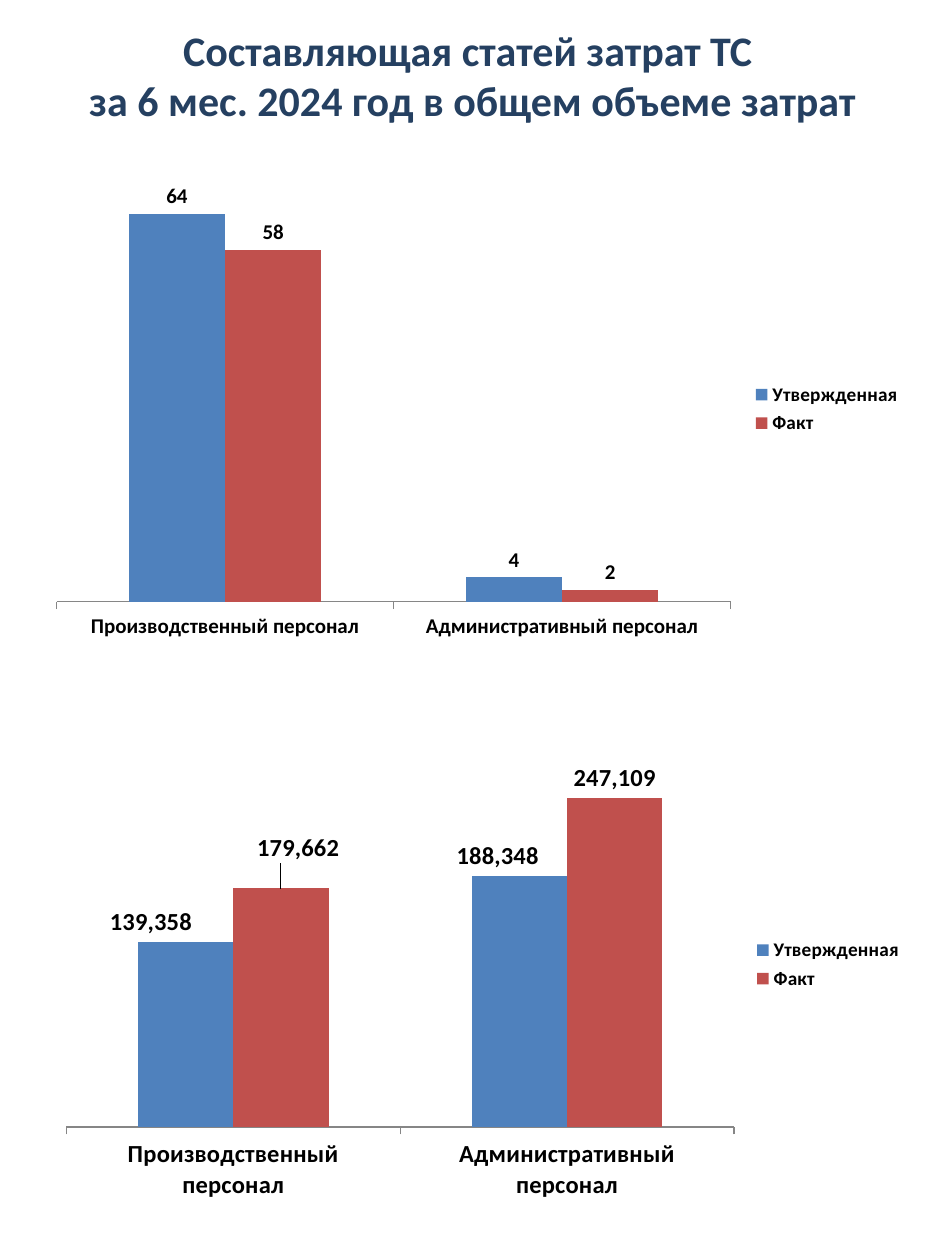
from lxml import etree
from pptx import Presentation
from pptx.chart.data import CategoryChartData
from pptx.dml.color import RGBColor
from pptx.enum.chart import (XL_CHART_TYPE, XL_LABEL_POSITION, XL_LEGEND_POSITION,
                             XL_TICK_LABEL_POSITION, XL_TICK_MARK)
from pptx.enum.text import MSO_ANCHOR, PP_ALIGN
from pptx.oxml.ns import qn
from pptx.util import Inches, Pt

COLUMNS = XL_CHART_TYPE.COLUMN_CLUSTERED
OUTSIDE = XL_LABEL_POSITION.OUTSIDE_END
LEGEND_RIGHT = XL_LEGEND_POSITION.RIGHT
NO_LABELS = XL_TICK_LABEL_POSITION.NONE
TICK_NONE, TICK_OUT = XL_TICK_MARK.NONE, XL_TICK_MARK.OUTSIDE
MIDDLE, CENTER = MSO_ANCHOR.MIDDLE, PP_ALIGN.CENTER

NAVY = RGBColor(0x25, 0x40, 0x61)
BLUE = RGBColor(0x4F, 0x81, 0xBD)
RED = RGBColor(0xC0, 0x50, 0x4D)
GREY = RGBColor(0x86, 0x86, 0x86)
BLACK = RGBColor(0, 0, 0)
FONT = "Calibri"
NUMBER = "#,##0"
CATEGORIES = ["Производственный персонал", "Административный персонал"]


def set_font(font, size, color=BLACK, bold=True):
    font.name = FONT
    font.size = Pt(size)
    font.bold = bold
    font.color.rgb = color


def add_layout(parent, index, **values):
    """Put a manual layout into a chart element, in fractions of the chart."""
    layout = parent.find(qn("c:layout"))
    if layout is None:
        layout = etree.Element(qn("c:layout"))
        parent.insert(index, layout)
    manual = etree.SubElement(layout, qn("c:manualLayout"))
    for tag, value in values.items():
        etree.SubElement(manual, qn("c:" + tag)).set("val", str(value))


prs = Presentation()
prs.slide_width, prs.slide_height = Inches(7.5), Inches(10)
s = prs.slides.add_slide(prs.slide_layouts[5])

# Title
title = s.shapes.title
title.left, title.top = Inches(0.13), Inches(0.2)
title.width, title.height = Inches(7.24), Inches(0.79)
tf = title.text_frame
tf.word_wrap = True
tf.vertical_anchor = MIDDLE
tf.text = "Составляющая статей затрат ТС \vза 6 мес. 2024 год в общем объеме затрат"
p = tf.paragraphs[0]
p.alignment = CENTER
set_font(p.font, 24, NAVY)

# Charts: box, text size, axis maximum, plot top and height, values,
# label shifts by (series, point)
charts = [
    ((0.31, 1.33, 6.95, 3.83), 12, 70, 0.02, 0.88, ([64, 4], [58, 2]), {}),
    ((0.39, 5.7, 6.88, 3.91), 14, 300000, 0.02, 0.81,
     ([139358, 188348], [179662, 247109]),
     {(0, 0): (-0.04, 0), (0, 1): (-0.025, 0), (1, 0): (0.02, -0.04)}),
]
for box, size, maximum, plot_top, plot_height, values, shifts in charts:
    data = CategoryChartData(number_format=NUMBER)
    data.categories = CATEGORIES
    for name, vals in zip(("Утвержденная", "Факт"), values):
        data.add_series(name, vals)
    chart = s.shapes.add_chart(COLUMNS, *[Inches(v) for v in box], data).chart
    set_font(chart.font, 10, bold=False)
    chart.has_title = False

    # Legend
    chart.has_legend = True
    chart.legend.position = LEGEND_RIGHT
    chart.legend.include_in_layout = False
    set_font(chart.legend.font, 11)

    # Axes
    cat_axis, val_axis = chart.category_axis, chart.value_axis
    set_font(cat_axis.tick_labels.font, size)
    cat_axis.major_tick_mark = TICK_OUT
    cat_axis.format.line.color.rgb = GREY
    cat_axis.format.line.width = Pt(0.75)
    val_axis.minimum_scale, val_axis.maximum_scale = 0, maximum
    val_axis.has_major_gridlines = False
    val_axis.major_tick_mark = TICK_NONE
    val_axis.tick_label_position = NO_LABELS
    val_axis.format.line.fill.background()

    # Columns and their labels
    plot = chart.plots[0]
    plot.gap_width, plot.overlap = 150, 0
    plot.vary_by_categories = False
    for series, color in zip(plot.series, (BLUE, RED)):
        series.format.fill.solid()
        series.format.fill.fore_color.rgb = color
        labels = series.data_labels
        labels.show_value = True
        labels.number_format = NUMBER
        labels.number_format_is_linked = False
        labels.position = OUTSIDE
        set_font(labels.font, size)

    for (row, col), (dx, dy) in shifts.items():
        label = plot.series[row].points[col].data_label
        set_font(label.font, size)
        label.position = OUTSIDE
        for element in plot.series[row].data_labels._element.findall(qn("c:dLbl")):
            if element.find(qn("c:idx")).get("val") == str(col):
                add_layout(element, 1, x=dx, y=dy)

    # Plot area
    plot_area = chart._chartSpace.chart.plotArea
    add_layout(plot_area, 0, layoutTarget="inner", xMode="edge", yMode="edge",
               x=0.02, y=plot_top, w=0.77, h=plot_height)

prs.save("out.pptx")
